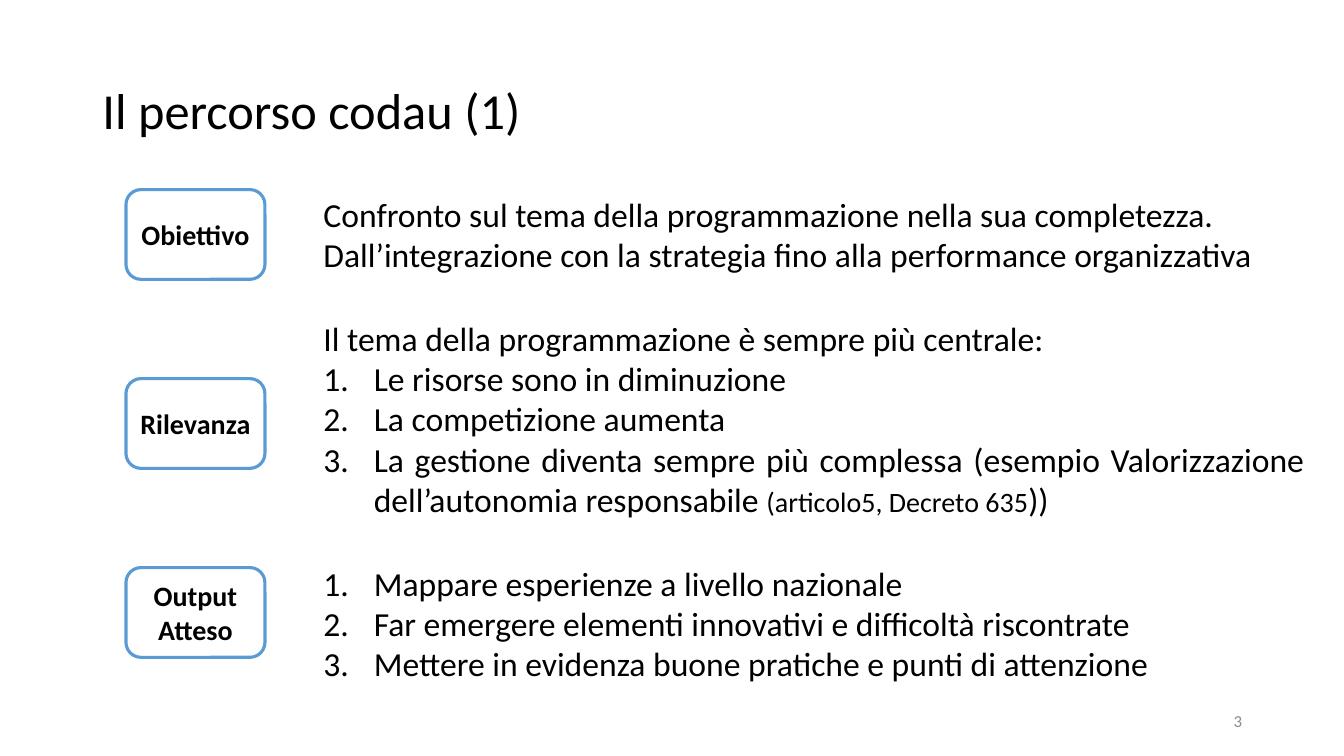
from dataclasses import dataclass

from lxml.etree import SubElement
from pptx import Presentation
from pptx.dml.color import RGBColor
from pptx.enum.shapes import MSO_SHAPE as Preset
from pptx.enum.text import MSO_ANCHOR as Anchor, MSO_AUTO_SIZE as AutoSize, PP_ALIGN as Align
from pptx.oxml.ns import qn
from pptx.util import Inches, Pt


@dataclass(frozen=True)
class Theme:
    font: str = "Calibri"
    text: RGBColor = RGBColor(0, 0, 0)
    muted: RGBColor = RGBColor(0x8C, 0x8C, 0x8C)
    paper: RGBColor = RGBColor(255, 255, 255)
    accent: RGBColor = RGBColor(0x5B, 0x9B, 0xD5)
    title_size: int = 36
    body_size: int = 24
    label_size: int = 20
    number_size: int = 12
    indent: float = 0.5


class SlideBuilder:
    COLUMNS, ROWS = 32, 24

    def __init__(self, presentation, theme):
        self.theme = theme
        self.column = presentation.slide_width / self.COLUMNS
        self.row = presentation.slide_height / self.ROWS
        self.slide = presentation.slides.add_slide(presentation.slide_layouts[4])
        self.bodies = [shape for shape in self.slide.placeholders
                       if shape != self.slide.shapes.title]

    def area(self, left, top, width, height):
        return (round(left * self.column), round(top * self.row),
                round(width * self.column), round(height * self.row))

    def place(self, shape, cells):
        shape.left, shape.top, shape.width, shape.height = self.area(*cells)

    def frame(self, shape, anchor):
        frame = shape.text_frame
        frame.word_wrap = True
        frame.auto_size = AutoSize.NONE
        frame.vertical_anchor = anchor
        return frame

    def style(self, paragraph, size, align=Align.LEFT, bold=False, color=None):
        paragraph.alignment = align
        font = paragraph.font
        font.name, font.size, font.bold = self.theme.font, Pt(size), bold
        font.color.rgb = color or self.theme.text

    def bullet(self, paragraph, numbered):
        properties = paragraph._p.get_or_add_pPr()
        indent = Inches(self.theme.indent) if numbered else 0
        properties.set("marL", str(indent))
        properties.set("indent", str(-indent))
        if numbered:
            SubElement(properties, qn("a:buFont"), typeface="+mj-lt")
            SubElement(properties, qn("a:buAutoNum"), type="arabicPeriod")
        else:
            SubElement(properties, qn("a:buNone"))

    def title(self, text, cells):
        shape = self.slide.shapes.title
        self.place(shape, cells)
        paragraph = self.frame(shape, Anchor.MIDDLE).paragraphs[0]
        paragraph.text = text
        paragraph.line_spacing = 0.9
        self.style(paragraph, self.theme.title_size)

    def label(self, text, cells):
        shape = self.slide.shapes.add_shape(Preset.ROUNDED_RECTANGLE, *self.area(*cells))
        shape.shadow.inherit = False
        shape.fill.solid()
        shape.fill.fore_color.rgb = self.theme.paper
        shape.line.color.rgb = self.theme.accent
        shape.line.width = Pt(2.25)
        frame = self.frame(shape, Anchor.MIDDLE)
        frame.margin_left = frame.margin_right = Inches(0.05)
        frame.text = text
        self.style(frame.paragraphs[0], self.theme.label_size, Align.CENTER, bold=True)

    def body(self, cells, intro="", items=(), align=Align.LEFT):
        shape = self.bodies.pop(0)
        self.place(shape, cells)
        frame = self.frame(shape, Anchor.TOP)
        entries = [((intro,), False)] if intro else []
        entries += [(item, True) for item in items]
        for position, (runs, numbered) in enumerate(entries):
            paragraph = frame.add_paragraph() if position else frame.paragraphs[0]
            for index, text in enumerate(runs):
                run = paragraph.add_run()
                run.text = text
                if index == 1:
                    run.font.size = Pt(self.theme.label_size)
            paragraph.space_before = Pt(0)
            self.bullet(paragraph, numbered)
            self.style(paragraph, self.theme.body_size, align if numbered else Align.LEFT)

    def page_number(self, text, cells):
        shape = self.slide.shapes.add_textbox(*self.area(*cells))
        paragraph = self.frame(shape, Anchor.MIDDLE).paragraphs[0]
        paragraph.text = text
        self.style(paragraph, self.theme.number_size, Align.RIGHT, color=self.theme.muted)

    def remove_unused(self):
        for shape in self.bodies:
            shape.element.getparent().remove(shape.element)


def main():
    presentation = Presentation()
    presentation.slide_width, presentation.slide_height = Inches(13.33), Inches(7.5)
    builder = SlideBuilder(presentation, Theme())
    builder.title("Il percorso codau (1)", (2.2, 1.28, 27.6, 4.64))

    for step, text in enumerate(("Obiettivo", "Rilevanza", "Output Atteso"), start=1):
        builder.label(text, (3, 6 * step + 0.02, 3.31, 2.85))

    text_left = 7.46
    builder.body(
        (text_left, 5.98, 22.97, 2.91),
        intro="Confronto sul tema della programmazione nella sua completezza. "
              "Dall’integrazione con la strategia fino alla performance organizzativa")
    builder.body(
        (text_left, 9.92, 23.84, 6.78),
        intro="Il tema della programmazione è sempre più centrale:",
        items=[("Le risorse sono in diminuzione",),
               ("La competizione aumenta",),
               ("La gestione diventa sempre più complessa (esempio Valorizzazione "
                "dell’autonomia responsabile ", "(articolo5, Decreto 635", "))")],
        align=Align.JUSTIFY)
    builder.body(
        (text_left, 17.7, 22.35, 4.19),
        items=[("Mappare esperienze a livello nazionale",),
               ("Far emergere elementi innovativi e difficoltà riscontrate",),
               ("Mettere in evidenza buone pratiche e punti di attenzione",)])
    builder.page_number("3", (22.61, 22.24, 7.2, 1.28))
    builder.remove_unused()
    presentation.save("out.pptx")


if __name__ == "__main__":
    main()
